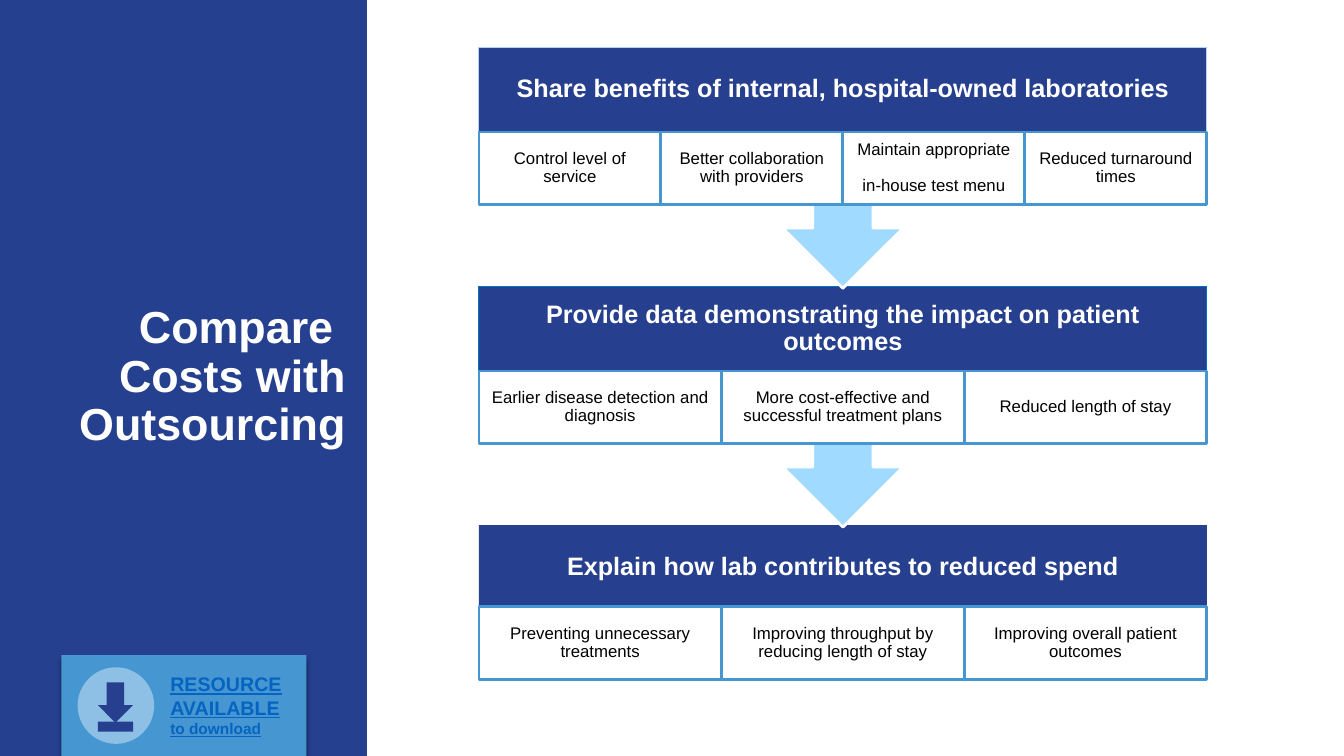
from lxml.etree import SubElement
from pptx import Presentation
from pptx.dml.color import RGBColor
from pptx.enum.shapes import MSO_SHAPE
from pptx.enum.text import MSO_ANCHOR, MSO_AUTO_SIZE, PP_ALIGN
from pptx.oxml.ns import qn
from pptx.util import Inches, Pt

NAVY = "26408F"
BLUE = "4696D2"
WHITE = "FFFFFF"

STEP_PITCH = 2.37
HEADER_HEIGHT = 0.84
CELL_HEIGHT = 0.72
CALLOUT_HEIGHT = 2.39

# Heading, header outline, offset of the cells from the header top, cell texts
STEPS = [
    ("Share benefits of internal, hospital-owned laboratories", "B3D4ED", 0.84,
     ["Control level of service", "Better collaboration with providers",
      "Maintain appropriate\nin-house test menu", "Reduced turnaround times"]),
    ("Provide data demonstrating the impact on patient outcomes", "0070C0", 0.84,
     ["Earlier disease detection and diagnosis",
      "More cost-effective and successful treatment plans",
      "Reduced length of stay"]),
    ("Explain how lab contributes to reduced spend", None, 0.81,
     ["Preventing unnecessary treatments",
      "Improving throughput by reducing length of stay",
      "Improving overall patient outcomes"]),
]


def color(hex_string):
    return RGBColor.from_string(hex_string)


def add_block(slide, kind, left, top, width, height, fill, line=None, line_width=2):
    shape = slide.shapes.add_shape(
        kind, Inches(left), Inches(top), Inches(width), Inches(height))
    shape.shadow.inherit = False
    shape.fill.solid()
    shape.fill.fore_color.rgb = color(fill)
    if line:
        shape.line.color.rgb = color(line)
        shape.line.width = Pt(line_width)
    else:
        shape.line.fill.background()
    return shape


def set_margins(frame, horizontal, vertical):
    frame.margin_left = frame.margin_right = Inches(horizontal)
    frame.margin_top = frame.margin_bottom = Inches(vertical)


def add_run(paragraph, text, size, hex_string, bold=False, underline=None):
    run = paragraph.add_run()
    run.text = text
    run.font.name = "Arial"
    run.font.size = Pt(size)
    run.font.bold = bold
    run.font.underline = underline
    run.font.color.rgb = color(hex_string)


def write_centred(shape, text, size, hex_string, bold, horizontal, vertical):
    """Write one centred paragraph for each line of the text."""
    frame = shape.text_frame
    frame.word_wrap = True
    frame.vertical_anchor = MSO_ANCHOR.MIDDLE
    set_margins(frame, horizontal, vertical)
    for index, line in enumerate(text.split("\n")):
        paragraph = frame.add_paragraph() if index else frame.paragraphs[0]
        paragraph.alignment = PP_ALIGN.CENTER
        paragraph.line_spacing = 0.9
        if index:
            paragraph.space_before = Pt(13)
        add_run(paragraph, line, size, hex_string, bold)


def add_title_panel(slide, left, top, width, height):
    panel = add_block(slide, MSO_SHAPE.RECTANGLE, left, top, width, height, "25408F")
    title = slide.shapes.title
    panel._element.addnext(title._element)
    title.left, title.top = Inches(left - 0.06), Inches(top + 2.55)
    title.width, title.height = Inches(width - 0.05), Inches(2.39)
    frame = title.text_frame
    frame.word_wrap = True
    frame.auto_size = MSO_AUTO_SIZE.NONE
    frame.vertical_anchor = MSO_ANCHOR.MIDDLE
    set_margins(frame, 0.1, 0.05)
    paragraph = frame.paragraphs[0]
    paragraph.alignment = PP_ALIGN.RIGHT
    paragraph.line_spacing = 0.9
    add_run(paragraph, "Compare ", 32, WHITE, True)
    paragraph.add_line_break()
    add_run(paragraph, "Costs with Outsourcing", 32, WHITE, True)


def add_step(slide, left, top, width, step, has_arrow):
    heading, outline, cell_offset, cells = step
    if has_arrow:
        callout = add_block(slide, MSO_SHAPE.UP_ARROW_CALLOUT, left, top, width,
                            CALLOUT_HEIGHT, "A1DAFF", WHITE)
        callout.rotation = 180
        for index, value in enumerate((0.25, 0.25, 0.25, 0.65)):
            callout.adjustments[index] = value
    header = add_block(slide, MSO_SHAPE.RECTANGLE, left, top, width, HEADER_HEIGHT,
                       NAVY, outline, 0.75)
    write_centred(header, heading, 18, WHITE, True, 0.14, 0.14)
    cell_width = width / len(cells)
    for index, text in enumerate(cells):
        cell = add_block(slide, MSO_SHAPE.RECTANGLE, left + index * cell_width,
                         top + cell_offset, cell_width, CELL_HEIGHT, WHITE, BLUE)
        write_centred(cell, text, 12, "000000", False, 0.12, 0.02)


def add_process(slide, left, top, width):
    """Stack the steps from the last to the first, so each arrow overlaps the next."""
    for index in reversed(range(len(STEPS))):
        add_step(slide, left, top + index * STEP_PITCH, width, STEPS[index],
                 has_arrow=index < len(STEPS) - 1)


def add_drop_shadow(shape):
    effects = shape._element.spPr.find(qn("a:effectLst"))
    shadow = SubElement(effects, qn("a:outerShdw"), blurRad=str(Pt(4)),
                        dist=str(Pt(3)), dir="5400000", rotWithShape="0")
    shade = SubElement(shadow, qn("a:srgbClr"), val="000000")
    SubElement(shade, qn("a:alpha"), val="40000")


def add_download_badge(slide, left, top, width, height):
    card = add_block(slide, MSO_SHAPE.RECTANGLE, left, top, width, height, BLUE)
    add_drop_shadow(card)

    label = slide.shapes.add_textbox(
        Inches(left + 0.98), Inches(top + 0.12), Inches(1.35), Inches(0.76))
    frame = label.text_frame
    frame.word_wrap = True
    frame.auto_size = MSO_AUTO_SIZE.SHAPE_TO_FIT_TEXT
    set_margins(frame, 0.1, 0.05)
    paragraph = frame.paragraphs[0]
    add_run(paragraph, "RESOURCE AVAILABLE", 14, "0563C1", True, True)
    paragraph.add_line_break()
    add_run(paragraph, "to download", 11, "0563C1", True, True)

    add_block(slide, MSO_SHAPE.OVAL, left + 0.16, top + 0.12, 0.76, 0.76, "8EBFE4")
    add_block(slide, MSO_SHAPE.DOWN_ARROW, left + 0.36, top + 0.27, 0.35, 0.4, NAVY)
    add_block(slide, MSO_SHAPE.RECTANGLE, left + 0.36, top + 0.66, 0.35, 0.1, NAVY)


def main():
    presentation = Presentation()
    presentation.slide_width = Inches(13.33)
    presentation.slide_height = Inches(7.5)
    slide = presentation.slides.add_slide(presentation.slide_layouts[5])
    add_title_panel(slide, 0, 0, 3.64, 7.5)
    add_process(slide, 4.75, 0.47, 7.22)
    add_download_badge(slide, 0.61, 6.5, 2.43, 1)
    presentation.save("out.pptx")


if __name__ == "__main__":
    main()
